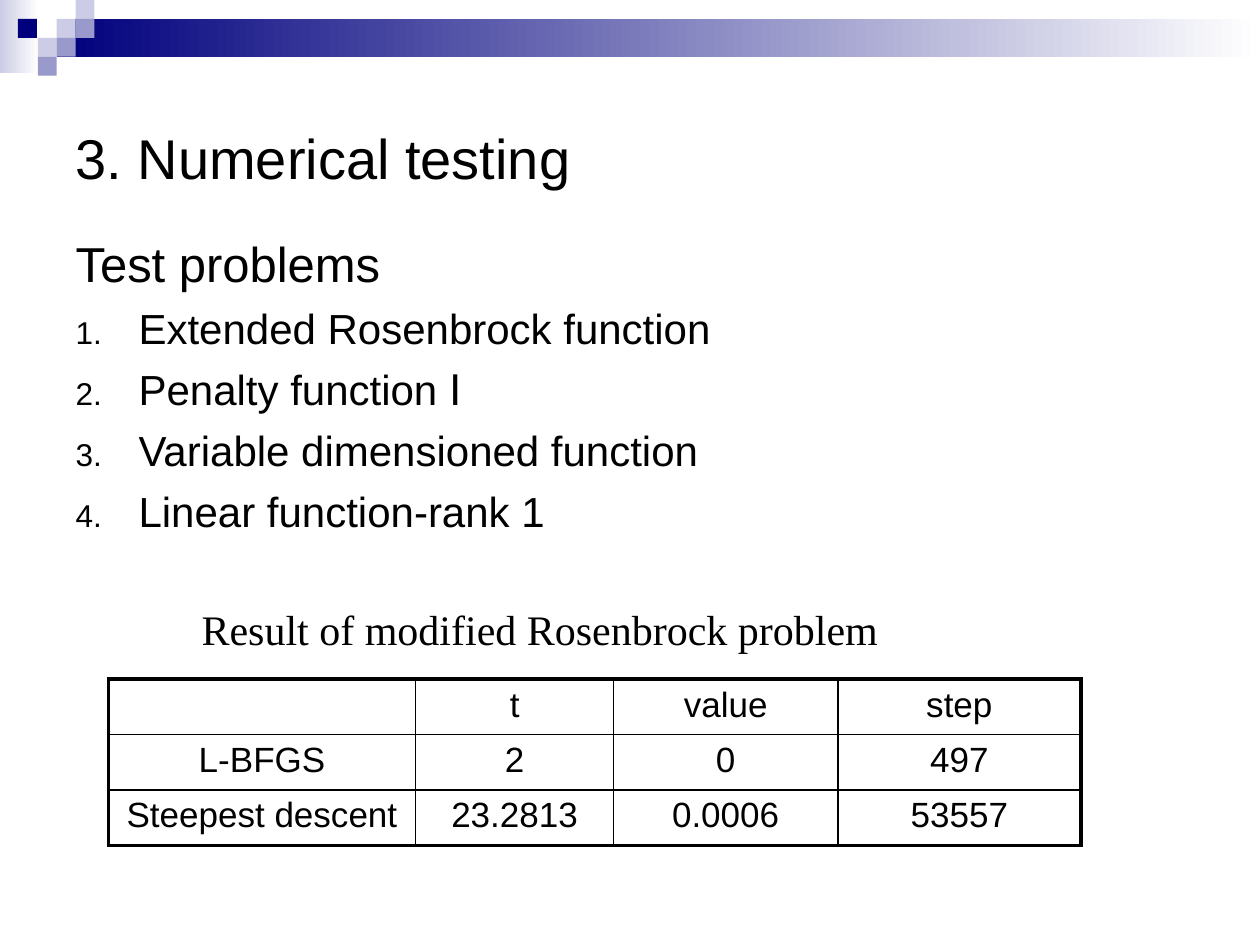
from dataclasses import dataclass
from lxml.etree import SubElement
from pptx import Presentation
from pptx.dml.color import RGBColor
from pptx.enum.shapes import MSO_SHAPE
from pptx.enum.text import MSO_ANCHOR, MSO_AUTO_SIZE, PP_ALIGN
from pptx.oxml.ns import qn
from pptx.util import Inches, Pt


@dataclass(frozen=True)
class Theme:
    navy: str = "00007D"
    violet: str = "9999CC"
    lavender: str = "CCCCE6"
    white: str = "FFFFFF"
    black: str = "000000"
    sans: str = "Arial"
    serif: str = "Times New Roman"
    title: int = 32
    heading: int = 28
    body: int = 24
    table: int = 20
    thin: float = 1
    thick: float = 2.25


theme = Theme()


def add_run(paragraph, text, size, font=theme.sans):
    run = paragraph.add_run()
    run.text = text
    run.font.size = Pt(size)
    run.font.name = font
    run.font.color.rgb = RGBColor.from_string(theme.black)


def add_block(shapes, box, color, fade_to=None):
    shape = shapes.add_shape(MSO_SHAPE.RECTANGLE, *(Inches(length) for length in box))
    shape.shadow.inherit = False
    shape.line.fill.background()
    if fade_to:
        shape.fill.gradient()
        shape.fill.gradient_angle = 0
        for stop, stop_color, position in zip(shape.fill.gradient_stops, (color, fade_to), (0, 1)):
            stop.color.rgb = RGBColor.from_string(stop_color)
            stop.position = position
    else:
        shape.fill.solid()
        shape.fill.fore_color.rgb = RGBColor.from_string(color)
    return shape


presentation = Presentation()
presentation.slide_width, presentation.slide_height = Inches(10), Inches(7.5)
slide = presentation.slides.add_slide(presentation.slide_layouts[1])
shapes = slide.shapes
title, body = slide.placeholders

# Header band: two gradients and a mosaic of squares on a 0.15 inch grid
unit = 0.15
blocks = [
    add_block(shapes, (0, 0, 0.31, 0.58), theme.lavender, theme.white),
    add_block(shapes, (3 * unit, unit, 10 - 3 * unit, 2 * unit), theme.navy, theme.white),
]
mosaic = [
    (3, 1, theme.lavender), (4, 0, theme.lavender), (4, 1, theme.violet),
    (2, 2, theme.lavender), (0.95, 1, theme.navy), (3, 2, theme.violet),
    (2, 3, theme.violet),
]
for column, row, color in mosaic:
    blocks.append(add_block(shapes, (column * unit, row * unit, unit, unit), color))
for position, block in enumerate(blocks, start=2):
    shapes.element.insert(position, block.element)

# Title
title.left, title.top, title.width, title.height = map(Inches, (0.5, 0.5, 9, 1.5))
title.text_frame.auto_size = MSO_AUTO_SIZE.NONE
title.text_frame.vertical_anchor = MSO_ANCHOR.MIDDLE
title.text_frame.paragraphs[0].alignment = PP_ALIGN.LEFT
add_run(title.text_frame.paragraphs[0], "3. Numerical testing", theme.title)

# Body: heading, numbered problems, table caption
body.left, body.top, body.width, body.height = map(Inches, (0.5, 1.8, 9, 4.62))
frame = body.text_frame
frame.auto_size = MSO_AUTO_SIZE.NONE
problems = [
    "Extended Rosenbrock function", "Penalty function Ⅰ",
    "Variable dimensioned function", "Linear function-rank 1",
]
# text, size, font, space before, left margin, first-line indent, numbered
lines = [
    ("Test problems", theme.heading, theme.sans, 6, 0.38, -0.38, False),
    *((text, theme.body, theme.sans, 6, 0.5, -0.5, True) for text in problems),
    ("Result of modified Rosenbrock problem", theme.body, theme.serif, 39, 1, 0, False),
]
for index, (text, size, font, space, margin, indent, numbered) in enumerate(lines):
    paragraph = frame.add_paragraph() if index else frame.paragraphs[0]
    paragraph.space_before = Pt(space)
    add_run(paragraph, text, size, font)
    properties = paragraph._p.get_or_add_pPr()
    properties.set("marL", str(Inches(margin)))
    properties.set("indent", str(Inches(indent)))
    if numbered:
        SubElement(properties, qn("a:buSzPct"), val="75000")
        SubElement(properties, qn("a:buFont"), typeface=theme.sans)
        SubElement(properties, qn("a:buAutoNum"), type="arabicPeriod")
    else:
        SubElement(properties, qn("a:buNone"))

# Results table: thick outer frame, thin inner rules
results = [
    ("", "t", "value", "step"),
    ("L-BFGS", "2", "0", "497"),
    ("Steepest descent", "23.2813", "0.0006", "53557"),
]
column_widths = (2.44, 1.57, 1.78, 1.93)
row_height = 0.44
last_row, last_column = len(results) - 1, len(column_widths) - 1
table = shapes.add_table(
    len(results), len(column_widths), Inches(0.86), Inches(5.39),
    Inches(sum(column_widths)), Inches(row_height * len(results)),
).table
table.first_row = table.horz_banding = False
for column, width in zip(table.columns, column_widths):
    column.width = Inches(width)
for row_index, values in enumerate(results):
    table.rows[row_index].height = Inches(row_height)
    for column_index, value in enumerate(values):
        cell = table.cell(row_index, column_index)
        outer_edges = {
            "a:lnL": column_index == 0, "a:lnR": column_index == last_column,
            "a:lnT": row_index == 0, "a:lnB": row_index == last_row,
        }
        for edge, outer in outer_edges.items():
            width = Pt(theme.thick if outer else theme.thin)
            border = SubElement(cell._tc.get_or_add_tcPr(), qn(edge), w=str(width))
            fill = SubElement(border, qn("a:solidFill"))
            SubElement(fill, qn("a:srgbClr"), val=theme.black)
        cell.fill.background()
        paragraph = cell.text_frame.paragraphs[0]
        paragraph.alignment = PP_ALIGN.CENTER
        if value:
            add_run(paragraph, value, theme.table)

presentation.save("out.pptx")
